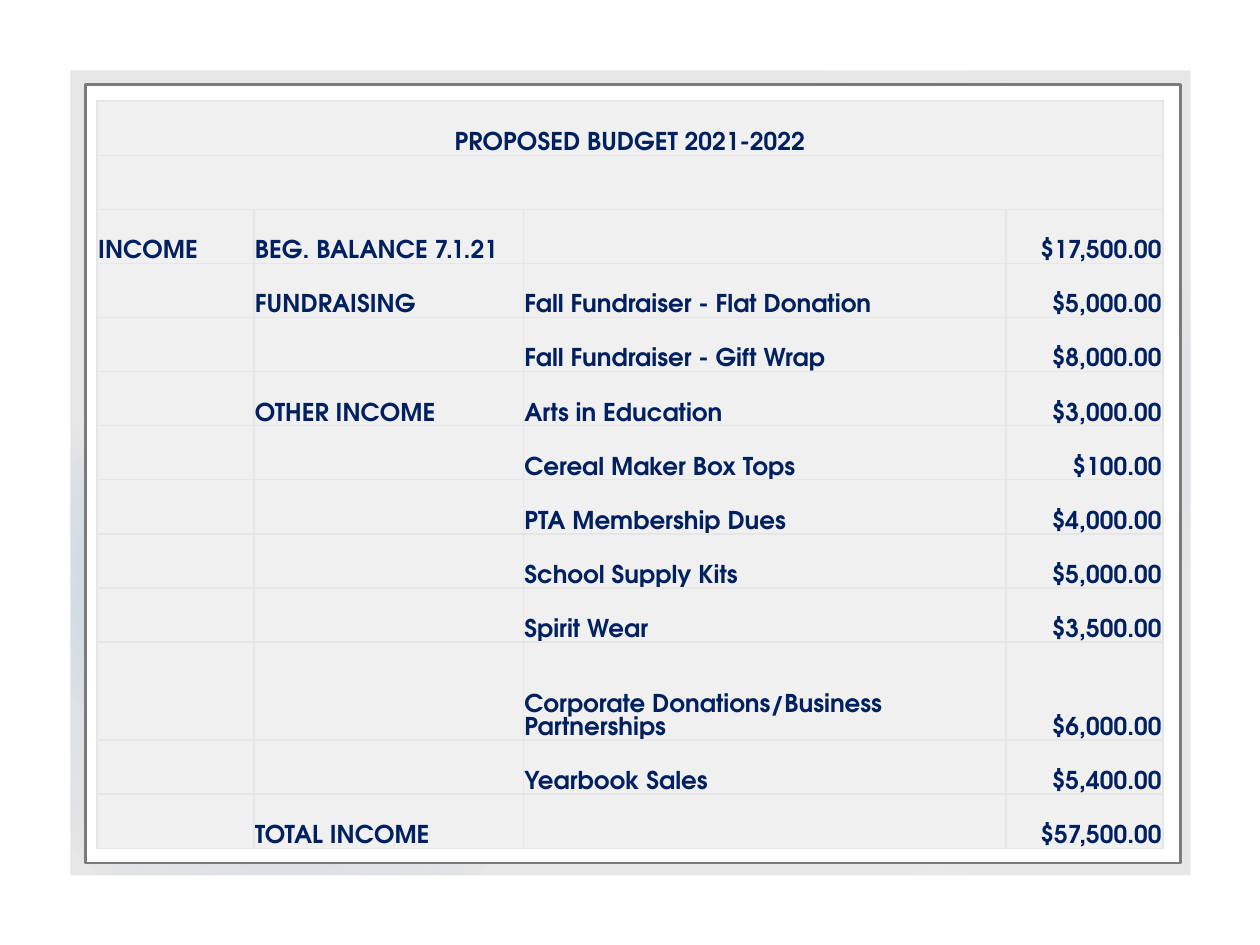
from lxml.etree import SubElement as Sub
from pptx import Presentation
from pptx.dml.color import RGBColor
from pptx.enum.shapes import MSO_SHAPE as Shape
from pptx.enum.text import MSO_ANCHOR as Anchor, PP_ALIGN as Align
from pptx.oxml.ns import qn
from pptx.util import Cm, Pt

NAVY = RGBColor(0x00, 0x20, 0x60)
WHITE = RGBColor(0xFF, 0xFF, 0xFF)
BLUE = RGBColor(0x5B, 0x9B, 0xD5)
GREY = RGBColor(0x7A, 0x7A, 0x7A)
PALE = RGBColor(0xF0, 0xF0, 0xF0)
MIST = RGBColor(0xE7, 0xE6, 0xE6)

WIDE, HIGH = 25.4, 19.05
GLOWS = [
    (17.5, 4.65, 7.82, BLUE, ((0, 7), (36, 6), (69, 0))),
    (0, 7.42, 11.63, BLUE, ((0, 11), (36, 10), (75, 0))),
    (15.8, 0, 4.45, WHITE, ((0, 14), (36, 7), (73, 0))),
    (17.5, 16.31, 2.74, WHITE, ((0, 14), (36, 7), (66, 0))),
    (0, 8.05, 6.55, BLUE, ((0, 8), (36, 8), (72, 0))),
]
COLS = [3.16, 5.43, 9.73, 3.16]
ROW, TALL = 1.09, 1.98
ROWS = [
    ("PROPOSED BUDGET 2021-2022", "", "", ""),
    ("", "", "", ""),
    ("INCOME", "BEG. BALANCE 7.1.21", "", "$17,500.00"),
    ("", "FUNDRAISING", "Fall Fundraiser - Flat Donation", "$5,000.00"),
    ("", "", "Fall Fundraiser - Gift Wrap", "$8,000.00"),
    ("", "OTHER INCOME", "Arts in Education", "$3,000.00"),
    ("", "", "Cereal Maker Box Tops", "$100.00"),
    ("", "", "PTA Membership Dues", "$4,000.00"),
    ("", "", "School Supply Kits", "$5,000.00"),
    ("", "", "Spirit Wear", "$3,500.00"),
    ("", "", "Corporate Donations/Business Partnerships", "$6,000.00"),
    ("", "", "Yearbook Sales", "$5,400.00"),
    ("", "TOTAL INCOME", "", "$57,500.00"),
]


class Deck:
    """Holds the text style and the current slide, and draws each kind of element."""

    def __init__(self, font, size, ink):
        self.font, self.size, self.ink = font, Pt(size), ink
        self.show = Presentation()
        self.show.slide_width, self.show.slide_height = Cm(WIDE), Cm(HIGH)
        self.slide = self.show.slides.add_slide(self.show.slide_layouts[6])

    def ground(self, tint):
        fill = self.slide.background.fill
        fill.solid()
        fill.fore_color.rgb = tint

    def glow(self, left, top, size, tint, stops):
        disc = self.slide.shapes.add_shape(Shape.OVAL, Cm(left), Cm(top), Cm(size), Cm(size))
        disc.shadow.inherit = False
        disc.line.fill.background()
        disc.fill.gradient()
        grad = disc.fill._xPr.find(qn("a:gradFill"))
        for child in list(grad):
            grad.remove(child)
        list_ = Sub(grad, qn("a:gsLst"))
        for spot, alpha in stops:
            stop = Sub(list_, qn("a:gs"), pos=str(spot * 1000))
            color = Sub(stop, qn("a:srgbClr"), val=str(tint))
            Sub(color, qn("a:alpha"), val=str(alpha * 1000))
        round_ = Sub(grad, qn("a:path"), path="circle")
        Sub(round_, qn("a:fillToRect"), l="50000", t="50000", r="50000", b="50000")

    def frame(self, left, top, right, low, tint):
        pen = self.slide.shapes.build_freeform(0, 0)
        pen.add_line_segments([(0, Cm(HIGH)), (Cm(WIDE), Cm(HIGH)), (Cm(WIDE), 0)])
        pen.move_to(Cm(right), Cm(low))
        pen.add_line_segments([(Cm(x), Cm(y)) for x, y in ((left, low), (left, top), (right, top))])
        self.paint(pen.convert_to_shape(), tint)

    def panel(self, left, top, width, height, tint, edge):
        box = self.slide.shapes.add_shape(Shape.RECTANGLE, Cm(left), Cm(top), Cm(width), Cm(height))
        self.paint(box, tint)
        box.line.color.rgb = edge
        box.line.width = Pt(1.5)

    def paint(self, shape, tint):
        shape.shadow.inherit = False
        shape.fill.solid()
        shape.fill.fore_color.rgb = tint
        shape.line.fill.background()

    def table(self, left, top, cols, highs, rows):
        grid = self.slide.shapes.add_table(
            len(rows), len(cols), Cm(left), Cm(top), Cm(sum(cols)), Cm(sum(highs))).table
        for col, width in zip(grid.columns, cols):
            col.width = Cm(width)
        for row, high in zip(grid.rows, highs):
            row.height = Cm(high)
        for r, row in enumerate(rows):
            for c, text in enumerate(row):
                self.cell(grid.cell(r, c), text, Align.RIGHT if c == 3 else Align.LEFT)
        for r in range(2):
            grid.cell(r, 0).merge(grid.cell(r, len(cols) - 1))
        grid.cell(0, 0).text_frame.paragraphs[0].alignment = Align.CENTER

    def cell(self, cell, text, align):
        cell.vertical_anchor = Anchor.BOTTOM
        cell.margin_left = cell.margin_right = cell.margin_top = Cm(0.02)
        cell.margin_bottom = 0
        props = cell._tc.get_or_add_tcPr()
        for side in ("lnL", "lnR", "lnT", "lnB"):
            line = Sub(props, qn(f"a:{side}"), w=str(Pt(1)))
            Sub(Sub(line, qn("a:solidFill")), qn("a:srgbClr"), val=str(MIST))
        cell.fill.solid()
        cell.fill.fore_color.rgb = PALE
        if text:
            para = cell.text_frame.paragraphs[0]
            para.alignment = align
            run = para.add_run()
            run.text = text
            run.font.name, run.font.size, run.font.bold = self.font, self.size, True
            run.font.color.rgb = self.ink


def main():
    deck = Deck("TeX Gyre Adventor", 14, NAVY)
    deck.ground(MIST)
    for glow in GLOWS:
        deck.glow(*glow)
    deck.frame(1.42, 1.42, 24, 17.65, WHITE)
    deck.panel(1.73, 1.7, 22.07, 15.7, WHITE, GREY)
    highs = [TALL if "Corporate" in row[2] else ROW for row in ROWS]
    deck.table(1.96, 2.04, COLS, highs, ROWS)
    deck.show.save("out.pptx")


if __name__ == "__main__":
    main()
